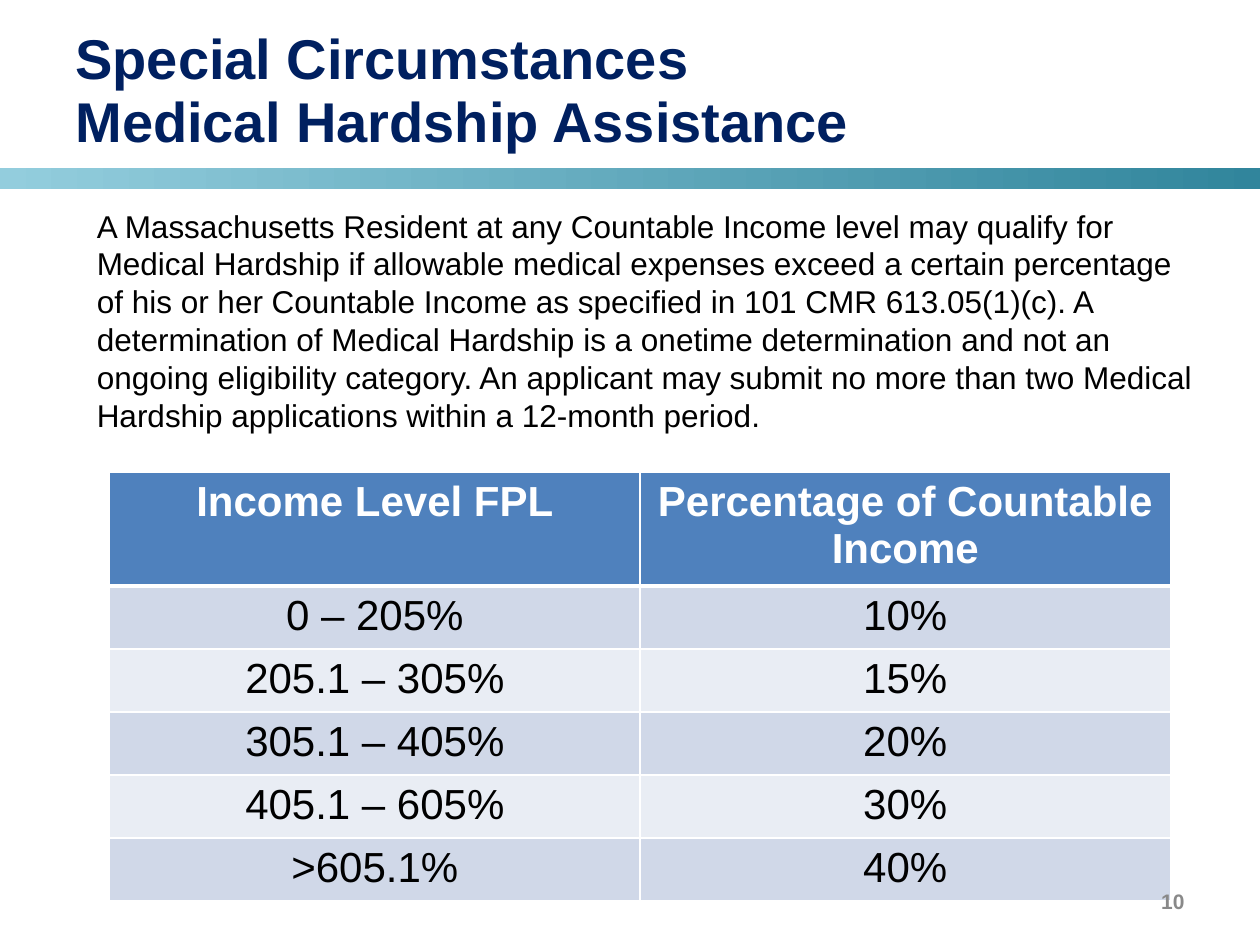
from lxml import etree
from pptx import Presentation
from pptx.dml.color import RGBColor
from pptx.enum.shapes import MSO_SHAPE
from pptx.enum.text import MSO_ANCHOR, MSO_AUTO_SIZE, PP_ALIGN
from pptx.oxml.ns import qn
from pptx.util import Inches, Pt

LEFT, CENTER, RIGHT = PP_ALIGN.LEFT, PP_ALIGN.CENTER, PP_ALIGN.RIGHT
TOP, MIDDLE = MSO_ANCHOR.TOP, MSO_ANCHOR.MIDDLE

NAVY = RGBColor(0x00, 0x20, 0x60)
BLACK = RGBColor(0x00, 0x00, 0x00)
WHITE = RGBColor(0xFF, 0xFF, 0xFF)
GRAY = RGBColor(0x89, 0x89, 0x89)
TEAL = RGBColor(0x31, 0x85, 0x9C)
LIGHT_TEAL = RGBColor(0x93, 0xCD, 0xDD)
HEADER_BLUE = RGBColor(0x4F, 0x81, 0xBD)
BANDS = (RGBColor(0xD0, 0xD8, 0xE8), RGBColor(0xE9, 0xED, 0xF4))

TITLE = "Special Circumstances\vMedical Hardship Assistance"
EXPLANATION = (
    "A Massachusetts Resident at any Countable Income level may qualify for "
    "Medical Hardship if allowable medical expenses exceed a certain percentage "
    "of his or her Countable Income as specified in 101 CMR 613.05(1)(c). "
    "A determination of Medical Hardship is a onetime determination and not an "
    "ongoing eligibility category. An applicant may submit no more than two "
    "Medical Hardship applications within a 12-month period."
)
INCOME_LEVELS = [
    ("Income Level FPL", "Percentage of Countable Income"),
    ("0 – 205%", "10%"),
    ("205.1 – 305%", "15%"),
    ("305.1 – 405%", "20%"),
    ("405.1 – 605%", "30%"),
    (">605.1%", "40%"),
]


def style_paragraph(paragraph, size, color, bold=False, align=LEFT):
    paragraph.alignment = align
    for run in paragraph.runs:
        run.font.name = "Arial"
        run.font.size = Pt(size)
        run.font.bold = bold
        run.font.color.rgb = color


def add_text(slide, box, text, size, color, bold=False, align=LEFT, anchor=TOP):
    frame = slide.shapes.add_textbox(*map(Inches, box)).text_frame
    frame.word_wrap = True
    frame.vertical_anchor = anchor
    frame.text = text
    style_paragraph(frame.paragraphs[0], size, color, bold, align)
    return frame


def add_divider(slide, box):
    divider = slide.shapes.add_shape(MSO_SHAPE.RECTANGLE, *map(Inches, box))
    divider.shadow.inherit = False
    divider.line.fill.background()
    divider.fill.gradient()
    divider.fill.gradient_angle = 180
    for stop, color in zip(divider.fill.gradient_stops, (TEAL, LIGHT_TEAL)):
        stop.color.rgb = color


def add_title(slide, box):
    title = add_text(slide, box, TITLE, 32, NAVY, bold=True, anchor=MIDDLE)
    title.paragraphs[0].line_spacing = Pt(36)


def add_explanation(slide, box):
    explanation = add_text(slide, box, EXPLANATION, 18, BLACK)
    explanation.auto_size = MSO_AUTO_SIZE.SHAPE_TO_FIT_TEXT


def set_borders(cell, color, **widths):
    """Draw the cell's edges; call before the fill, which must follow them."""
    properties = cell._tc.get_or_add_tcPr()
    for side in ("L", "R", "T", "B"):
        edge = etree.SubElement(properties, qn(f"a:ln{side}"), w=str(Pt(widths.get(side, 1))))
        fill = etree.SubElement(edge, qn("a:solidFill"))
        etree.SubElement(fill, qn("a:srgbClr"), val=str(color))


def add_income_table(slide, box, header_height=0.51, row_height=0.45):
    table = slide.shapes.add_table(
        len(INCOME_LEVELS), len(INCOME_LEVELS[0]), *map(Inches, box)
    ).table
    for column in table.columns:
        column.width = Inches(box[2] / len(table.columns))
    for r, values in enumerate(INCOME_LEVELS):
        header = r == 0
        table.rows[r].height = Inches(header_height if header else row_height)
        # A heavier rule separates the header from the body
        heavy = {0: {"B": 3}, 1: {"T": 3}}.get(r, {})
        for c, value in enumerate(values):
            cell = table.cell(r, c)
            set_borders(cell, WHITE, **heavy)
            cell.fill.solid()
            cell.fill.fore_color.rgb = HEADER_BLUE if header else BANDS[(r - 1) % 2]
            cell.text = value
            style_paragraph(cell.text_frame.paragraphs[0], 24,
                            WHITE if header else BLACK, header, CENTER)


def add_page_number(slide, box):
    add_text(slide, box, "10", 12, GRAY, bold=True, align=RIGHT, anchor=MIDDLE)


def main():
    deck = Presentation()
    deck.slide_width, deck.slide_height = Inches(10), Inches(7.5)
    slide = deck.slides.add_slide(deck.slide_layouts[6])

    # Heading
    add_divider(slide, (0, 1.33, 10, 0.17))
    add_title(slide, (0.5, 0.33, 7.17, 0.78))

    # Body
    add_explanation(slide, (0.67, 1.59, 9, 1.92))
    add_income_table(slide, (0.87, 3.75, 8.42, 2.74))

    # Footer
    add_page_number(slide, (7.17, 6.95, 2.33, 0.4))

    deck.save("out.pptx")


if __name__ == "__main__":
    main()
